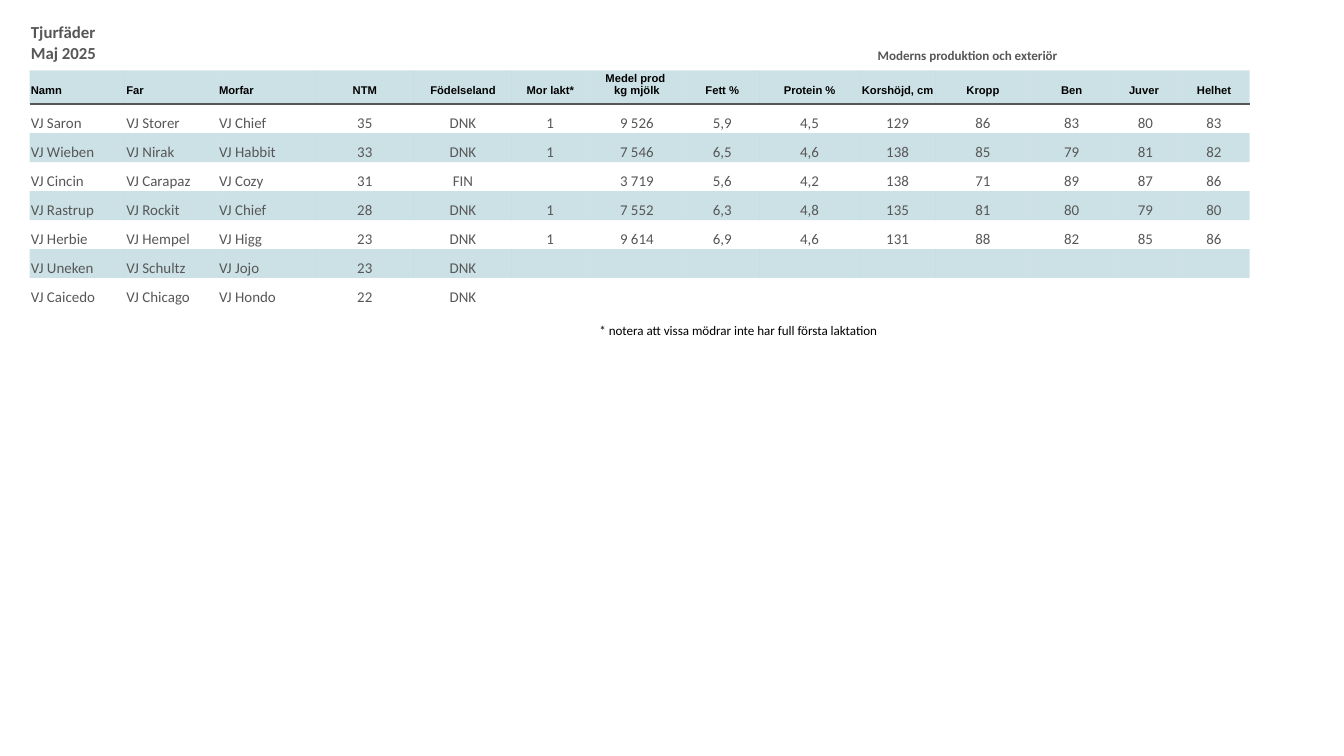
from lxml import etree
from pptx import Presentation
from pptx.dml.color import RGBColor
from pptx.enum import text
from pptx.oxml import ns
from pptx.util import Inches, Pt

HUES = {"grey": "575757", "black": "000000", "teal": "006B85"}
PLAIN = "{2D5ABB26-0587-4C30-8999-92F81FD0307C}"  # no style, no grid

WIDTHS = [0.71, 0.69, 0.73, 0.73, 0.73, 0.57, 0.72,
          0.55, 0.75, 0.56, 0.71, 0.61, 0.49, 0.53]
HEIGHTS = [0.36, 0.25] + [0.216] * 7
HEADS = ["Namn", "Far", "Morfar", "NTM", "Födelseland", "Mor lakt*",
         "Medel prod \vkg mjölk", "Fett %", "Protein %", "Korshöjd, cm",
         "Kropp", "Ben", "Juver ", "Helhet"]
BULLS = """\
VJ Saron|VJ Storer|VJ Chief|35|DNK|1|9 526|5,9|4,5|129|86|83|80|83
VJ Wieben|VJ Nirak|VJ Habbit|33|DNK|1|7 546|6,5|4,6|138|85|79|81|82
VJ Cincin|VJ Carapaz|VJ Cozy|31|FIN||3 719|5,6|4,2|138|71|89|87|86
VJ Rastrup|VJ Rockit|VJ Chief|28|DNK|1|7 552|6,3|4,8|135|81|80|79|80
VJ Herbie|VJ Hempel|VJ Higg|23|DNK|1|9 614|6,9|4,6|131|88|82|85|86
VJ Uneken|VJ Schultz|VJ Jojo|23|DNK|||||||||
VJ Caicedo|VJ Chicago|VJ Hondo|22|DNK|||||||||"""


def add_grid(left, top, widths, heights):
    """Add an unstyled table with the given column widths and row heights."""
    frame = slide.shapes.add_table(
        len(heights), len(widths), Inches(left), Inches(top),
        Inches(sum(widths)), Inches(sum(heights)))
    grid = frame.table
    grid.first_row = grid.horz_banding = False
    grid._tbl.tblPr.find(ns.qn("a:tableStyleId")).text = PLAIN
    for col, width in zip(grid.columns, widths):
        col.width = Inches(width)
    for row, height in zip(grid.rows, heights):
        row.height = Inches(height)
    return grid


def fill_cell(cell, words, size, hue, face="Calibri", bold=False,
              mid=False, foot=0.05, tint=False, rule=None):
    """Write and format one cell; rule names the side that has a line."""
    cell.margin_left = cell.margin_right = cell.margin_top = Inches(0.01)
    cell.margin_bottom = Inches(foot)
    cell.vertical_anchor = text.MSO_ANCHOR.BOTTOM
    para = cell.text_frame.paragraphs[0]
    para.text = words
    para.alignment = text.PP_ALIGN.CENTER if mid else text.PP_ALIGN.LEFT
    font = para.font
    font.size, font.name, font.bold = Pt(size), face, bold
    font.color.rgb = RGBColor.from_string(HUES[hue])
    if not words:  # keeps an empty cell as low as its row
        etree.SubElement(para._p, ns.qn("a:endParaRPr"), sz=str(size * 100))
    if tint:
        cell.fill.solid()
        cell.fill.fore_color.rgb = RGBColor.from_string(HUES["teal"])
        shade = next(cell._tc.tcPr.iter(ns.qn("a:srgbClr")))
        etree.SubElement(shade, ns.qn("a:alpha"), val="20000")
    else:
        cell.fill.background()
    for spot, side in enumerate(["lnT", "lnB"]):
        line = etree.Element(ns.qn(f"a:{side}"), w=str(Pt(1)))
        if side == rule:
            paint = etree.SubElement(line, ns.qn("a:solidFill"))
            etree.SubElement(paint, ns.qn("a:srgbClr"), val=HUES["grey"])
        else:
            etree.SubElement(line, ns.qn("a:noFill"))
        cell._tc.tcPr.insert(spot, line)


prs = Presentation()
prs.slide_width = Inches(10)
prs.slide_height = prs.slide_width * 9 // 16
slide = prs.slides.add_slide(prs.slide_layouts[6])

# Bull table: caption row, heading row, then one row for each bull
bulls = add_grid(0.22, 0.16, WIDTHS, HEIGHTS)
tops = {0: "Tjurfäder\vMaj 2025", 7: "Moderns produktion och exteriör"}
for c, head in enumerate(HEADS):
    fill_cell(bulls.cell(0, c), tops.get(c, ""), 7 if c else 9, "grey",
              bold=True, mid=c > 2)
    fill_cell(bulls.cell(1, c), head, 6, "black", "Arial", bold=True,
              mid=c > 2, tint=True, rule="lnB")
for first, last in [(0, 1), (5, 6), (7, 13)]:
    bulls.cell(0, first).merge(bulls.cell(0, last))

for r, line in enumerate(BULLS.splitlines(), 2):
    for c, words in enumerate(line.split("|")):
        fill_cell(bulls.cell(r, c), words, 8, "grey", mid=c > 2, foot=0,
                  tint=r % 2 == 1, rule="lnT" if r == 2 else None)

# Footnote
note = add_grid(4.45, 2.35, [3.58], [0.22])
fill_cell(note.cell(0, 0),
          "* notera att vissa mödrar inte har full första laktation",
          7, "black")

prs.save("out.pptx")
